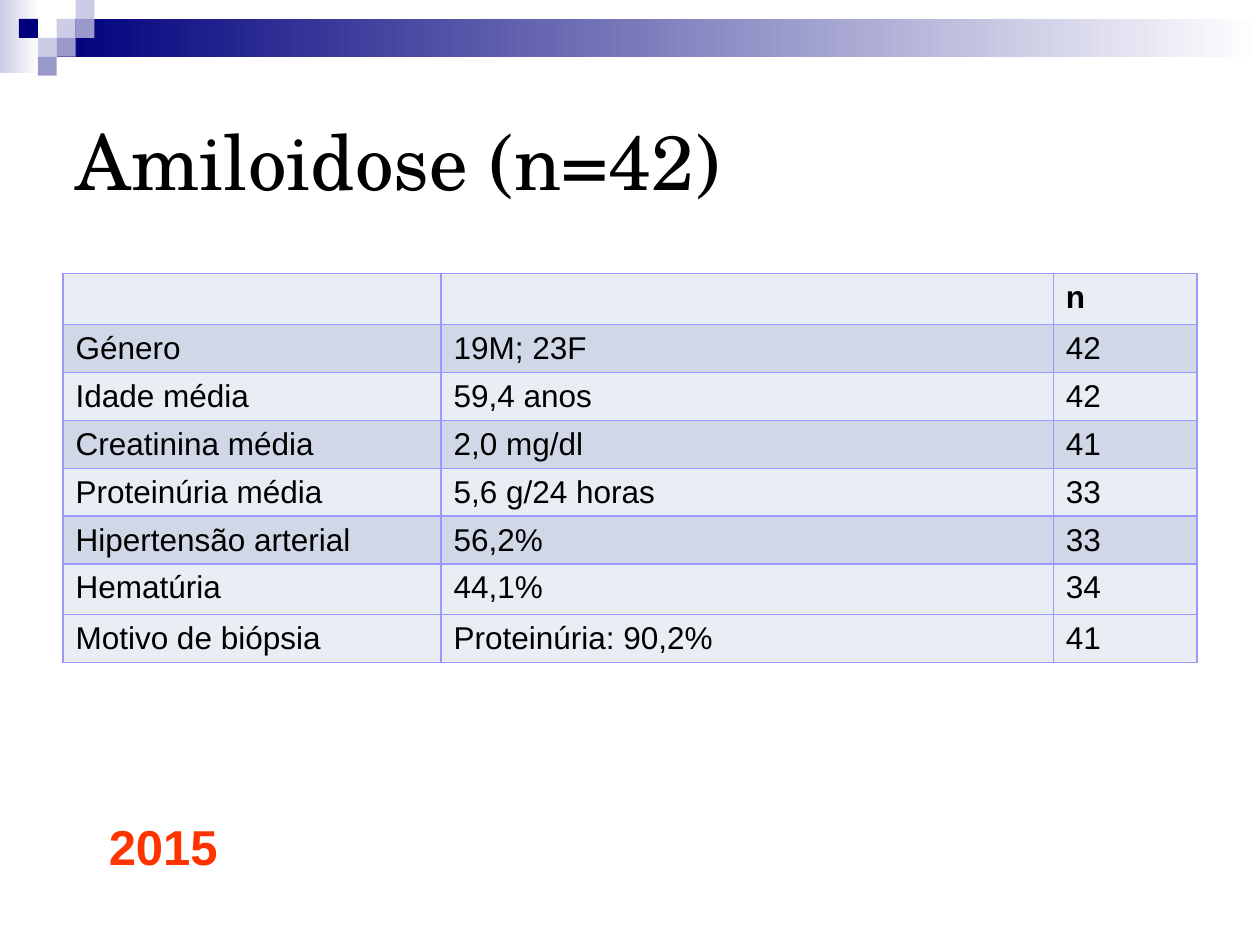
from lxml import etree
from pptx import Presentation
from pptx.dml.color import RGBColor
from pptx.enum.shapes import MSO_SHAPE
from pptx.enum.text import MSO_ANCHOR as ANCHOR, PP_ALIGN as ALIGN
from pptx.oxml.ns import qn
from pptx.util import Inches, Pt

COLORS = {"navy": "00007D", "lilac": "CCCCE6", "violet": "9999CC", "white": "FFFFFF",
          "black": "000000", "red": "FF3300", "border": "9999FF",
          "light": "E9EDF4", "dark": "D0D8E8"}

TITLE = "Amiloidose (n=42)"
YEAR = "2015"
ROWS = [
    ("", "", "n"),
    ("Género", "19M; 23F", "42"),
    ("Idade média", "59,4 anos", "42"),
    ("Creatinina média", "2,0 mg/dl", "41"),
    ("Proteinúria média", "5,6 g/24 horas", "33"),
    ("Hipertensão arterial", "56,2%", "33"),
    ("Hematúria", "44,1%", "34"),
    ("Motivo de biópsia", "Proteinúria: 90,2%", "41"),
]
COL_WIDTHS = [3, 4.86, 1.14]
ROW_HEIGHT, TALL_ROW_HEIGHT, TALL_ROW = 0.38, 0.4, 6
DARK_ROWS = (1, 3, 5)

# Header decoration: gradient bars, then squares as (column, row, colour)
BARS = [(0, 0, 0.31, 0.58, "lilac"), (0.45, 0.15, 9.55, 0.3, "navy")]
SQUARE = 0.15
SQUARES = [(3, 1, "lilac"), (4, 0, "lilac"), (4, 1, "violet"), (2, 2, "lilac"),
           (1, 1, "navy"), (3, 2, "violet"), (2, 3, "violet")]


def rgb(name):
    return RGBColor.from_string(COLORS[name])


def add_rect(slide, x, y, w, h, color, fade=False):
    sp = slide.shapes.add_shape(MSO_SHAPE.RECTANGLE, *map(Inches, (x, y, w, h)))
    sp.shadow.inherit = False
    sp.line.fill.background()
    if fade:
        sp.fill.gradient()
        sp.fill.gradient_angle = 0
        for stop, name in zip(sp.fill.gradient_stops, (color, "white")):
            stop.color.rgb = rgb(name)
    else:
        sp.fill.solid()
        sp.fill.fore_color.rgb = rgb(color)


def write(tf, text, size=18, font="Arial", color="black", bold=False, align=ALIGN.LEFT):
    p = tf.paragraphs[0]
    p.alignment = align
    r = p.add_run()
    r.text = text
    r.font.size, r.font.name, r.font.bold = Pt(size), font, bold
    r.font.color.rgb = rgb(color)


def set_borders(cell, color, width):
    tc_pr = cell._tc.get_or_add_tcPr()
    for i, side in enumerate(("lnL", "lnR", "lnT", "lnB")):
        ln = etree.Element(qn(f"a:{side}"), w=str(Pt(width)))
        fill = etree.SubElement(ln, qn("a:solidFill"))
        etree.SubElement(fill, qn("a:srgbClr"), val=COLORS[color])
        tc_pr.insert(i, ln)


def add_data_table(slide, x, y):
    heights = [TALL_ROW_HEIGHT if i == TALL_ROW else ROW_HEIGHT for i in range(len(ROWS))]
    table = slide.shapes.add_table(
        len(ROWS), len(COL_WIDTHS), Inches(x), Inches(y),
        Inches(sum(COL_WIDTHS)), Inches(sum(heights))).table
    table.first_row = table.horz_banding = False
    for col, width in zip(table.columns, COL_WIDTHS):
        col.width = Inches(width)
    for i, (values, height) in enumerate(zip(ROWS, heights)):
        table.rows[i].height = Inches(height)
        for j, value in enumerate(values):
            cell = table.cell(i, j)
            cell.fill.solid()
            cell.fill.fore_color.rgb = rgb("dark" if i in DARK_ROWS else "light")
            set_borders(cell, "border", 1)
            if value:
                write(cell.text_frame, value, bold=i == 0)


def main():
    prs = Presentation()
    prs.slide_width, prs.slide_height = Inches(10), Inches(7.5)
    slide = prs.slides.add_slide(prs.slide_layouts[5])

    # Header decoration
    for *box, color in BARS:
        add_rect(slide, *box, color, fade=True)
    for col, row, color in SQUARES:
        add_rect(slide, col * SQUARE, row * SQUARE, SQUARE, SQUARE, color)

    # Title
    title = slide.shapes.title
    title.left, title.top, title.width, title.height = map(Inches, (0.5, 0.52, 9, 1.5))
    title.text_frame.vertical_anchor = ANCHOR.MIDDLE
    write(title.text_frame, TITLE, size=44, font="TeX Gyre Schola")

    # Patient data
    add_data_table(slide, 0.5, 2.17)

    # Year
    tf = slide.shapes.add_textbox(*map(Inches, (0.35, 6.43, 1.89, 0.57))).text_frame
    tf.word_wrap = True
    write(tf, YEAR, size=28, color="red", bold=True, align=ALIGN.CENTER)

    prs.save("out.pptx")


if __name__ == "__main__":
    main()
